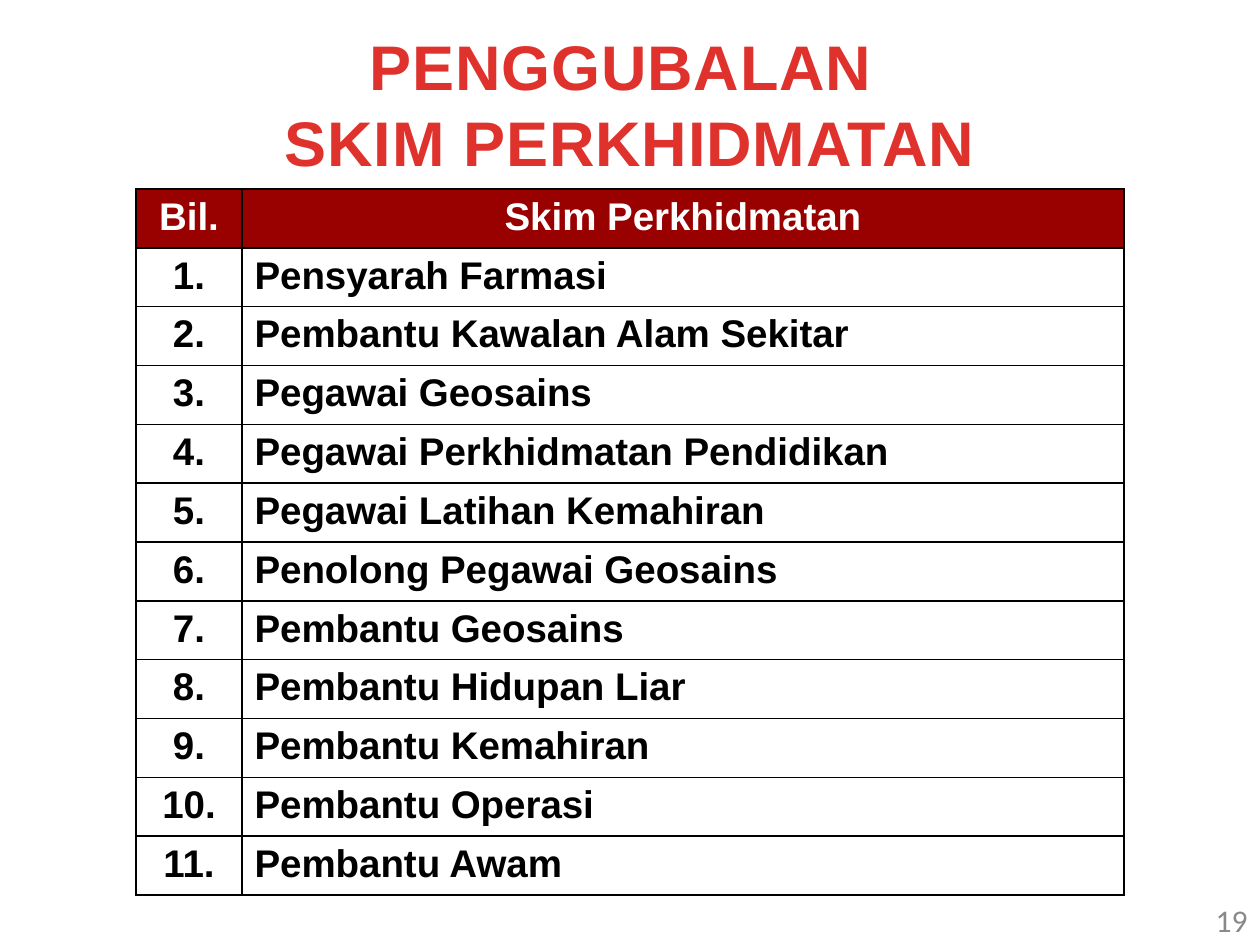
from lxml import etree
from pptx import Presentation
from pptx.dml.color import RGBColor
from pptx.enum.text import MSO_ANCHOR, PP_ALIGN
from pptx.oxml.ns import qn
from pptx.util import Pt

LEFT, CENTER, RIGHT = PP_ALIGN.LEFT, PP_ALIGN.CENTER, PP_ALIGN.RIGHT
MIDDLE = MSO_ANCHOR.MIDDLE
TITLE_ONLY = 5
EMU_PER_PX = 914400 / 126
HEADER = ("Bil.", "Skim Perkhidmatan")
SCHEMES = (
    "Pensyarah Farmasi",
    "Pembantu Kawalan Alam Sekitar",
    "Pegawai Geosains",
    "Pegawai Perkhidmatan Pendidikan",
    "Pegawai Latihan Kemahiran",
    "Penolong Pegawai Geosains",
    "Pembantu Geosains",
    "Pembantu Hidupan Liar",
    "Pembantu Kemahiran",
    "Pembantu Operasi",
    "Pembantu Awam",
)


def px(n):
    """Turn pixels into EMU."""
    return round(n * EMU_PER_PX)


def color(value):
    """Turn a hex string into a colour."""
    return RGBColor.from_string(value)


def format_text(tf, size, font, hex_color, align, bold=False):
    """Give every paragraph and run of a text frame one format."""
    for p in tf.paragraphs:
        p.alignment = align
        for r in p.runs:
            r.font.size = Pt(size)
            r.font.name = font
            r.font.bold = bold
            r.font.color.rgb = color(hex_color)


def add_title(s, text):
    """Place and format the slide title."""
    sp = s.shapes.title
    sp.left, sp.top, sp.width, sp.height = px(0), px(21), px(1260), px(165)
    tf = sp.text_frame
    tf.text = text
    tf.word_wrap = True
    tf.vertical_anchor = MIDDLE
    format_text(tf, 36, "Arial", "E0322D", CENTER, True)
    for p in tf.paragraphs:
        for r in p.runs:
            r.font._element.set("spc", "50")


def set_borders(cell):
    """Draw a thin black line on all four sides of a cell."""
    tcPr = cell._tc.get_or_add_tcPr()
    for i, side in enumerate(("a:lnL", "a:lnR", "a:lnT", "a:lnB")):
        ln = etree.Element(qn(side), w=str(Pt(1)))
        fill = etree.SubElement(ln, qn("a:solidFill"))
        etree.SubElement(fill, qn("a:srgbClr"), val="000000")
        tcPr.insert(i, ln)


def fill_cell(cell, text, fill, font_color, align):
    """Write and format one table cell."""
    cell.text = text
    cell.fill.solid()
    cell.fill.fore_color.rgb = color(fill)
    format_text(cell.text_frame, 22, "Arial", font_color, align, True)
    set_borders(cell)


def add_scheme_table(s):
    """Add the numbered table of service schemes."""
    rows = [HEADER] + [(f"{n}.", name) for n, name in enumerate(SCHEMES, 1)]
    frame = s.shapes.add_table(len(rows), 2, px(136), px(189), px(988), px(706))
    table = frame.table
    for column, width in zip(table.columns, (106, 882)):
        column.width = px(width)
    for i, row in enumerate(rows):
        fill, font_color = ("990000", "FFFFFF") if i == 0 else ("FFFFFF", "000000")
        for j, text in enumerate(row):
            align = LEFT if i and j else CENTER
            fill_cell(table.cell(i, j), text, fill, font_color, align)


def add_page_number(s, text):
    """Add the page number at the bottom right."""
    tf = s.shapes.add_textbox(px(966), px(895), px(294), px(50)).text_frame
    tf.text = text
    tf.word_wrap = True
    tf.vertical_anchor = MIDDLE
    format_text(tf, 18, "Calibri", "898989", RIGHT)


def main():
    """Build and save the slide."""
    prs = Presentation()
    prs.slide_width, prs.slide_height = px(1260), px(945)
    s = prs.slides.add_slide(prs.slide_layouts[TITLE_ONLY])
    add_scheme_table(s)
    add_title(s, "PENGGUBALAN \nSKIM PERKHIDMATAN")
    add_page_number(s, "19")
    prs.save("out.pptx")


if __name__ == "__main__":
    main()
